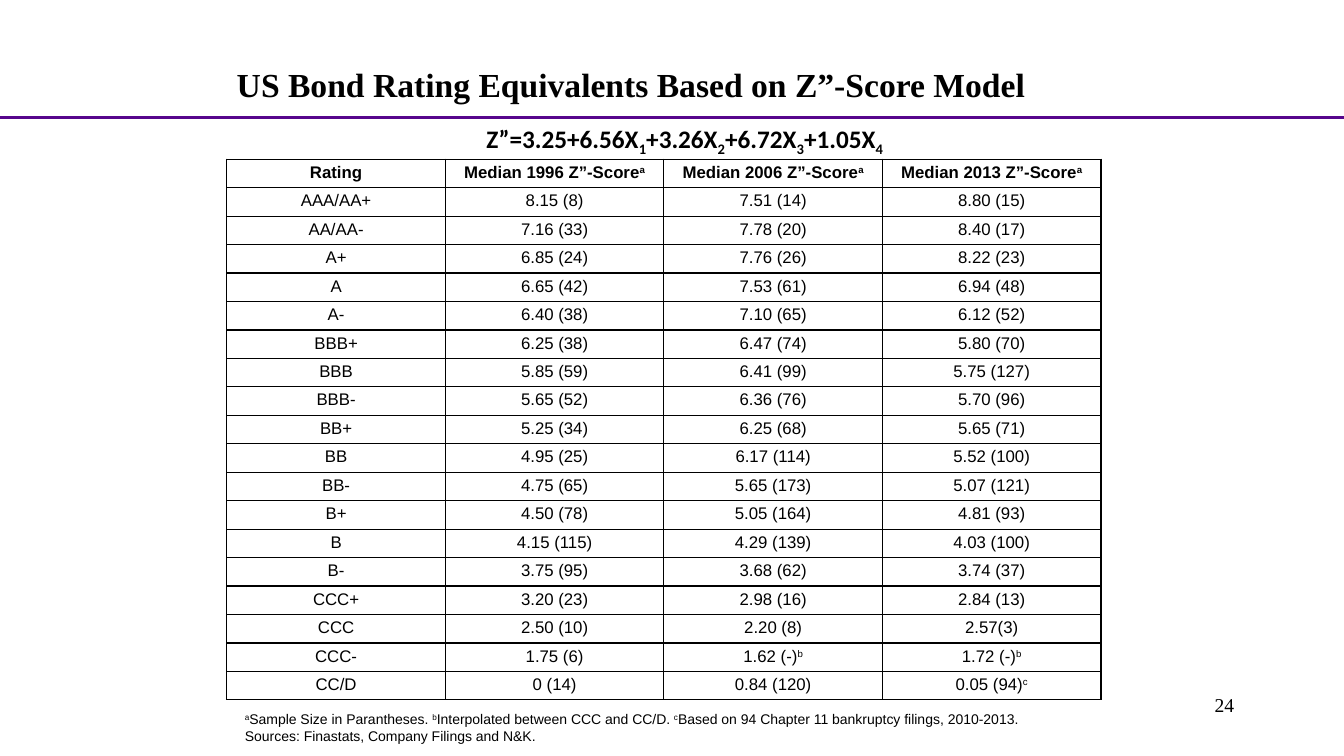
from lxml import etree
from pptx import Presentation
from pptx.dml.color import RGBColor
from pptx.enum.shapes import MSO_CONNECTOR
from pptx.enum.text import MSO_ANCHOR, PP_ALIGN
from pptx.oxml import parse_xml
from pptx.oxml.ns import nsdecls, qn
from pptx.util import Inches, Pt

# Content: a run starting with ^ is raised, one starting with _ is lowered
TITLE = ["US Bond Rating Equivalents Based on Z”-Score Model"]
FORMULA = ["Z”=3.25+6.56X", "_1", "+3.26X", "_2", "+6.72X", "_3", "+1.05X", "_4"]
FOOTNOTES = [
    ["^a", "Sample Size in Parantheses. ", "^b", "Interpolated between CCC and CC/D. ",
     "^c", "Based on 94 Chapter 11 bankruptcy filings, 2010-2013."],
    ["Sources: Finastats, Company Filings and N&K."],
]
PAGE = ["24"]
YEARS = (1996, 2006, 2013)
RATINGS = [
    ("AAA/AA+", "8.15 (8)", "7.51 (14)", "8.80 (15)"),
    ("AA/AA-", "7.16 (33)", "7.78 (20)", "8.40 (17)"),
    ("A+", "6.85 (24)", "7.76 (26)", "8.22 (23)"),
    ("A", "6.65 (42)", "7.53 (61)", "6.94 (48)"),
    ("A-", "6.40 (38)", "7.10 (65)", "6.12 (52)"),
    ("BBB+", "6.25 (38)", "6.47 (74)", "5.80 (70)"),
    ("BBB", "5.85 (59)", "6.41 (99)", "5.75 (127)"),
    ("BBB-", "5.65 (52)", "6.36 (76)", "5.70 (96)"),
    ("BB+", "5.25 (34)", "6.25 (68)", "5.65 (71)"),
    ("BB", "4.95 (25)", "6.17 (114)", "5.52 (100)"),
    ("BB-", "4.75 (65)", "5.65 (173)", "5.07 (121)"),
    ("B+", "4.50 (78)", "5.05 (164)", "4.81 (93)"),
    ("B", "4.15 (115)", "4.29 (139)", "4.03 (100)"),
    ("B-", "3.75 (95)", "3.68 (62)", "3.74 (37)"),
    ("CCC+", "3.20 (23)", "2.98 (16)", "2.84 (13)"),
    ("CCC", "2.50 (10)", "2.20 (8)", "2.57(3)"),
    ("CCC-", "1.75 (6)", ("1.62 (-)", "^b"), ("1.72 (-)", "^b")),
    ("CC/D", "0 (14)", "0.84 (120)", ("0.05 (94)", "^c")),
]
HEADER = ("Rating", *((f"Median {year} Z”-Score", "^a") for year in YEARS))

THEME = {
    "ink": RGBColor(0, 0, 0),
    "paper": RGBColor(0xFF, 0xFF, 0xFF),
    "rule": RGBColor(0x57, 0x06, 0x8C),
    # font, size, bold
    "title": ("Times New Roman", 24, True),
    "formula": ("Calibri", 18, True),
    "header": ("Arial", 12, True),
    "body": ("Arial", 12, False),
    "note": ("Arial", 10, False),
    "page": ("Times New Roman", 14, False),
}
BASELINES = {"^": "30000", "_": "-25000"}


def add_runs(p, runs, style, align=PP_ALIGN.LEFT):
    p.alignment = align
    for text in runs:
        r = p.add_run()
        r.text = text.lstrip("^_")
        r.font.name, size, r.font.bold = THEME[style]
        r.font.size = Pt(size)
        r.font.color.rgb = THEME["ink"]
        if text[0] in BASELINES:
            r.font._element.set("baseline", BASELINES[text[0]])


def add_text(s, box, paragraphs, style, align=PP_ALIGN.LEFT, anchor=MSO_ANCHOR.TOP):
    tf = s.shapes.add_textbox(*map(Inches, box)).text_frame
    tf.word_wrap = True
    tf.vertical_anchor = anchor
    for i, runs in enumerate(paragraphs):
        p = tf.add_paragraph() if i else tf.paragraphs[0]
        add_runs(p, runs, style, align)
    return tf


def add_borders(cell):
    tcPr = cell._tc.get_or_add_tcPr()
    for side in ("lnL", "lnR", "lnT", "lnB"):
        tcPr.append(parse_xml(
            f'<a:{side} {nsdecls("a")} w="{Pt(1)}"><a:solidFill>'
            f'<a:srgbClr val="{THEME["ink"]}"/></a:solidFill></a:{side}>'))


def add_ratings(s, box):
    rows = [HEADER, *RATINGS]
    table = s.shapes.add_table(len(rows), len(HEADER), *map(Inches, box)).table
    table.first_row = table.horz_banding = False
    for column in table.columns:
        column.width = Inches(box[2] / len(HEADER))
    for i, values in enumerate(rows):
        table.rows[i].height = Inches(box[3] / len(rows))
        for j, value in enumerate(values):
            cell = table.cell(i, j)
            add_borders(cell)
            cell.fill.solid()
            cell.fill.fore_color.rgb = THEME["paper"]
            cell.vertical_anchor = MSO_ANCHOR.MIDDLE
            p = cell.text_frame.paragraphs[0]
            p.line_spacing = Pt(12)
            runs = [value] if isinstance(value, str) else value
            add_runs(p, runs, "body" if i else "header", PP_ALIGN.CENTER)


def main():
    prs = Presentation()
    prs.slide_width, prs.slide_height = Inches(13.33), Inches(7.5)
    s = prs.slides.add_slide(prs.slide_layouts[6])

    # Rule below the title
    y = Inches(1.17)
    rule = s.shapes.add_connector(MSO_CONNECTOR.STRAIGHT, 0, y, prs.slide_width, y)
    rule.line.color.rgb = THEME["rule"]
    rule.line.width = Pt(2.25)
    etree.SubElement(rule._element.spPr, qn("a:effectLst"))

    # Title and formula
    add_text(s, (2.25, 0.58, 9.17, 0.5), [TITLE], "title", anchor=MSO_ANCHOR.MIDDLE)
    add_text(s, (2.5, 1.17, 8.58, 0.4), [FORMULA], "formula", PP_ALIGN.CENTER)

    # Ratings table
    add_ratings(s, (2.25, 1.58, 8.67, 5.37))

    # Footnotes and page number
    notes = add_text(s, (2.33, 7, 8.08, 0.44), FOOTNOTES, "note")
    notes.paragraphs[-1].space_after = Pt(6)
    add_text(s, (9.56, 6.83, 2.78, 0.5), [PAGE], "page", PP_ALIGN.RIGHT)

    prs.save("out.pptx")


if __name__ == "__main__":
    main()
